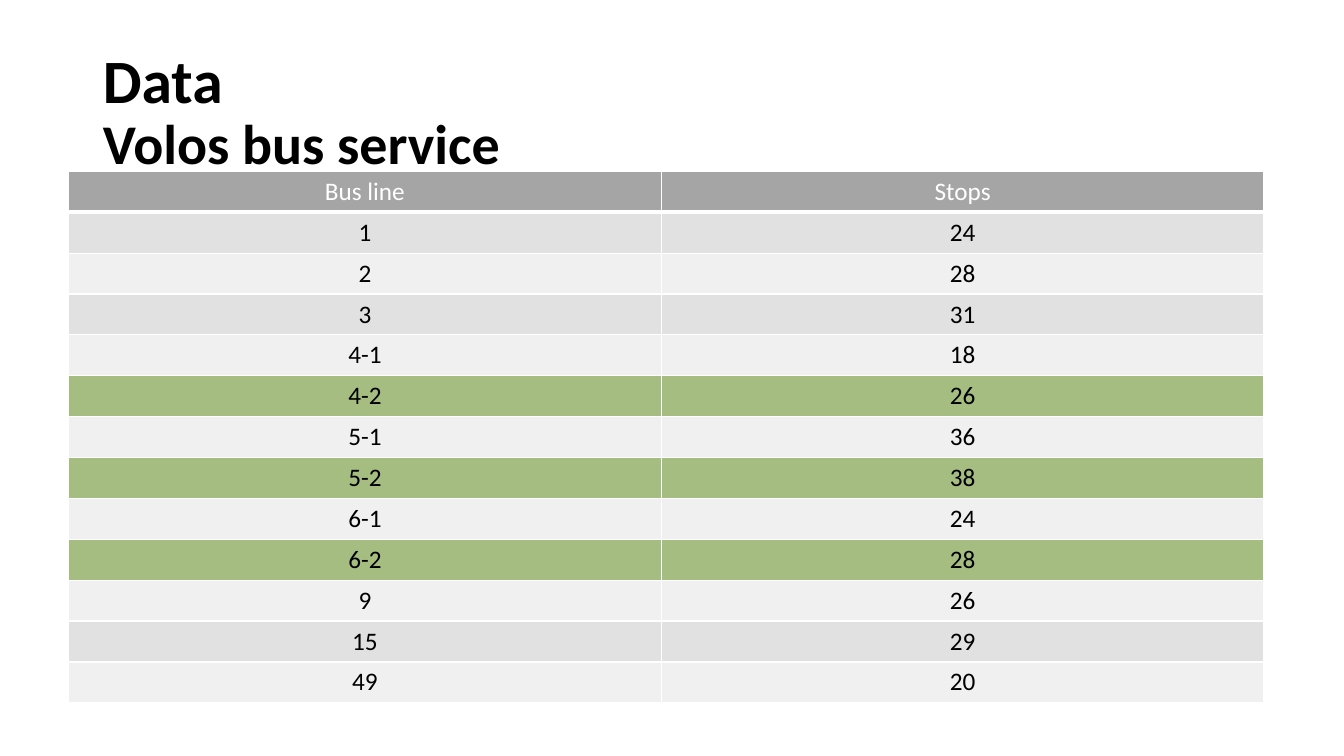
from dataclasses import dataclass

import lxml.etree
import pptx
import pptx.dml.color
import pptx.enum.text
import pptx.oxml.ns
import pptx.util

RGBColor = pptx.dml.color.RGBColor
Align = pptx.enum.text.PP_ALIGN

BLACK = RGBColor(0x00, 0x00, 0x00)
WHITE = RGBColor(0xFF, 0xFF, 0xFF)
HEADER_GREY = RGBColor(0xA5, 0xA5, 0xA5)
BAND_DARK = RGBColor(0xE1, 0xE1, 0xE1)
BAND_LIGHT = RGBColor(0xF0, 0xF0, 0xF0)
RETURN_GREEN = RGBColor(0xA5, 0xBD, 0x81)

FONT = "Calibri"
SLIDE_WIDTH = pptx.util.Inches(13.33)
SLIDE_HEIGHT = pptx.util.Inches(7.5)
COLUMN_SHARES = (44.1, 44.85)
ROW_SHARE = 5.41


@dataclass(frozen=True)
class BusLine:
    name: str
    stops: int
    highlighted: bool = False


BUS_LINES = (
    BusLine("1", 24),
    BusLine("2", 28),
    BusLine("3", 31),
    BusLine("4-1", 18),
    BusLine("4-2", 26, highlighted=True),
    BusLine("5-1", 36),
    BusLine("5-2", 38, highlighted=True),
    BusLine("6-1", 24),
    BusLine("6-2", 28, highlighted=True),
    BusLine("9", 26),
    BusLine("15", 29),
    BusLine("49", 20),
)


def across(percent: float) -> int:
    return round(SLIDE_WIDTH * percent / 100)


def down(percent: float) -> int:
    return round(SLIDE_HEIGHT * percent / 100)


def write(paragraph, text: str, *, size: float, color: RGBColor = BLACK,
          bold: bool = False, align: Align = Align.CENTER) -> None:
    paragraph.alignment = align
    run = paragraph.add_run()
    run.text = text
    run.font.name = FONT
    run.font.size = pptx.util.Pt(size)
    run.font.bold = bold
    run.font.color.rgb = color


def add_borders(cell, bottom: float) -> None:
    properties = cell._tc.get_or_add_tcPr()
    qn = pptx.oxml.ns.qn
    widths = {"a:lnL": 1, "a:lnR": 1, "a:lnT": 1, "a:lnB": bottom}
    for position, (edge, width) in enumerate(widths.items()):
        line = lxml.etree.Element(qn(edge), w=str(pptx.util.Pt(width)))
        fill = lxml.etree.SubElement(line, qn("a:solidFill"))
        lxml.etree.SubElement(fill, qn("a:srgbClr"), val=str(WHITE))
        properties.insert(position, line)


def fill_row(table, row: int, texts: tuple[str, ...], fill: RGBColor,
             color: RGBColor = BLACK, bottom: float = 1) -> None:
    table.rows[row].height = down(ROW_SHARE)
    for column, text in enumerate(texts):
        cell = table.cell(row, column)
        cell.margin_left = cell.margin_right = pptx.util.Inches(0.13)
        cell.margin_top = cell.margin_bottom = pptx.util.Inches(0.05)
        cell.fill.solid()
        cell.fill.fore_color.rgb = fill
        add_borders(cell, bottom)
        write(cell.text_frame.paragraphs[0], text, size=18, color=color)


def add_title(slide) -> None:
    title = slide.shapes.title
    title.left, title.top = across(6.9), down(5.33)
    title.width, title.height = across(86.25), down(19.33)
    frame = title.text_frame
    frame.word_wrap = True
    frame.auto_size = pptx.enum.text.MSO_AUTO_SIZE.NONE
    frame.vertical_anchor = pptx.enum.text.MSO_ANCHOR.MIDDLE
    heading = frame.paragraphs[0]
    heading.line_spacing = 0.9
    write(heading, "Data", size=44, bold=True, align=Align.LEFT)
    heading.add_line_break()
    write(heading, "Volos bus service", size=40, bold=True, align=Align.LEFT)


def add_stops_table(slide) -> None:
    row_count = len(BUS_LINES) + 1
    table = slide.shapes.add_table(
        row_count, len(COLUMN_SHARES), across(5.1), down(22.67),
        across(sum(COLUMN_SHARES)), down(ROW_SHARE * row_count)).table
    table.horz_banding = False
    for column, share in zip(table.columns, COLUMN_SHARES):
        column.width = across(share)
    fill_row(table, 0, ("Bus line", "Stops"), HEADER_GREY, WHITE, bottom=3)
    for row, line in enumerate(BUS_LINES, start=1):
        band = BAND_DARK if row % 2 else BAND_LIGHT
        fill = RETURN_GREEN if line.highlighted else band
        fill_row(table, row, (line.name, str(line.stops)), fill)


def main() -> None:
    presentation = pptx.Presentation()
    presentation.slide_width = SLIDE_WIDTH
    presentation.slide_height = SLIDE_HEIGHT
    slide = presentation.slides.add_slide(presentation.slide_layouts[5])
    add_title(slide)
    add_stops_table(slide)
    presentation.save("out.pptx")


if __name__ == "__main__":
    main()
